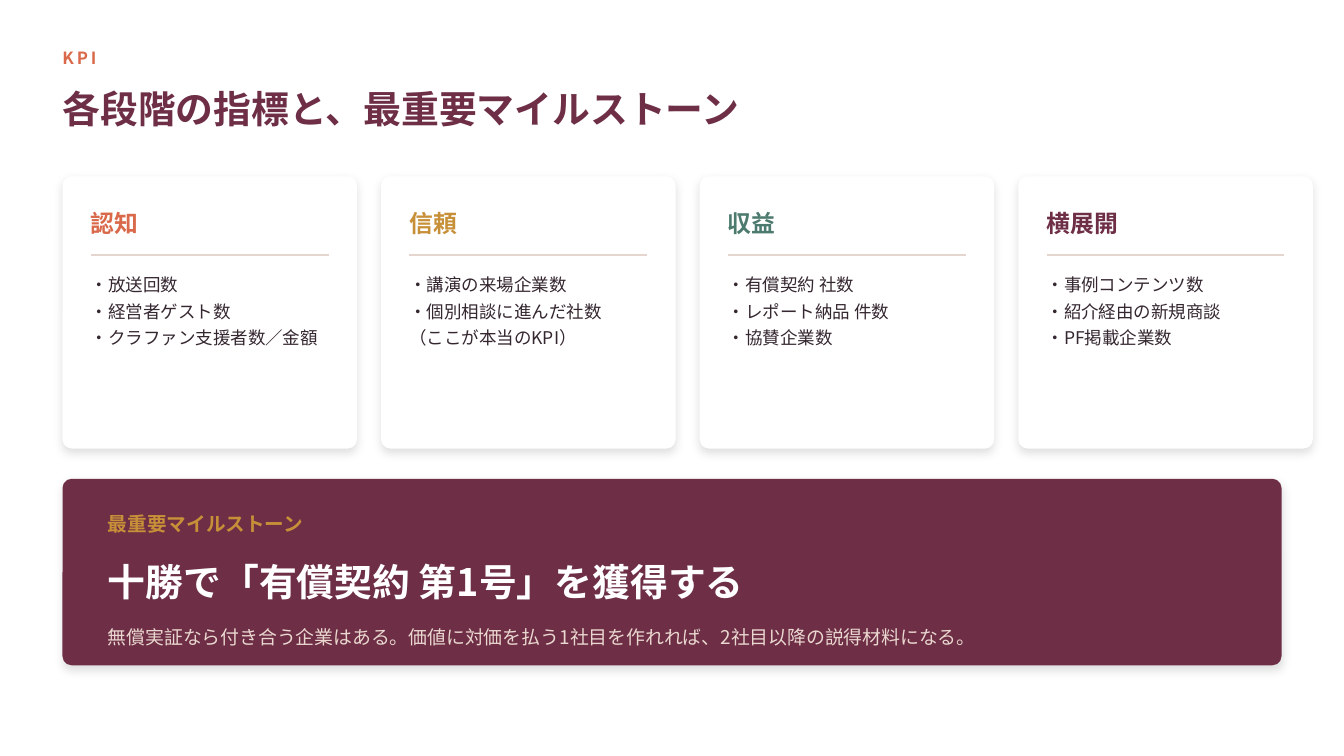
from lxml import etree
from pptx import Presentation
from pptx.dml.color import RGBColor
from pptx.enum.shapes import MSO_CONNECTOR, MSO_SHAPE
from pptx.enum.text import MSO_ANCHOR, MSO_AUTO_SIZE, PP_ALIGN
from pptx.oxml import parse_xml
from pptx.oxml.ns import nsdecls, qn
from pptx.util import Pt

LINE = MSO_CONNECTOR.STRAIGHT
ROUND_RECT = MSO_SHAPE.ROUNDED_RECTANGLE
LEFT = PP_ALIGN.LEFT
TOP, MIDDLE = MSO_ANCHOR.TOP, MSO_ANCHOR.MIDDLE
NO_AUTOFIT = MSO_AUTO_SIZE.NONE

PX = 9144  # EMU per px, 100 px to the inch
COMPARISON_LAYOUT = 4
FONT = "Noto Sans CJK JP"
COLORS = {
    "plum": "6D2E46", "coral": "D9694A", "gold": "C79038", "green": "4C7A6E",
    "ink": "352730", "rule": "E4D6CE", "blush": "EAD7CF", "white": "FFFFFF",
}
SHADOW = (
    f'<a:effectLst {nsdecls("a")}>'
    '<a:outerShdw blurRad="88900" dist="38100" dir="5400000" algn="ctr" rotWithShape="0">'
    '<a:srgbClr val="000000"><a:alpha val="12000"/></a:srgbClr>'
    '</a:outerShdw></a:effectLst>'
)

MARGIN, WIDTH = 62, 1209
CARD_TOP, CARD_W, CARD_H, CARD_STEP, CARD_PAD = 175, 292, 270, 316, 28
BANNER_TOP, BANNER_H, BANNER_PAD = 475, 185, 45
RADIUS = 9

CARDS = [
    ("認知", "coral", ["・放送回数", "・経営者ゲスト数", "・クラファン支援者数／金額"]),
    ("信頼", "gold", ["・講演の来場企業数", "・個別相談に進んだ社数", "（ここが本当のKPI）"]),
    ("収益", "green", ["・有償契約 社数", "・レポート納品 件数", "・協賛企業数"]),
    ("横展開", "plum", ["・事例コンテンツ数", "・紹介経由の新規商談", "・PF掲載企業数"]),
]


def rgb(name):
    return RGBColor.from_string(COLORS[name])


class Deck:
    def __init__(self, width, height):
        self.prs = Presentation()
        self.prs.slide_width, self.prs.slide_height = width * PX, height * PX
        self.s = self.prs.slides.add_slide(self.prs.slide_layouts[COMPARISON_LAYOUT])

    def fill_text(self, sp, lines, size, color, bold=False, anchor=MIDDLE,
                  line_spacing=None, tracking=None):
        tf = sp.text_frame
        tf.word_wrap = True
        tf.auto_size = NO_AUTOFIT
        tf.vertical_anchor = anchor
        tf.margin_left = tf.margin_right = tf.margin_top = tf.margin_bottom = 0
        for i, line in enumerate(lines):
            p = tf.add_paragraph() if i else tf.paragraphs[0]
            pPr = p._p.get_or_add_pPr()
            pPr.set("marL", "0")
            pPr.set("indent", "0")
            etree.SubElement(pPr, qn("a:buNone"))
            p.alignment = LEFT
            p.space_before = p.space_after = Pt(0)
            p.line_spacing = line_spacing
            r = p.add_run()
            r.text = line
            r.font.size, r.font.bold, r.font.name = Pt(size), bold, FONT
            r.font.color.rgb = rgb(color)
            rPr = r._r.get_or_add_rPr()
            etree.SubElement(rPr, qn("a:ea")).set("typeface", FONT)
            if tracking:
                rPr.set("spc", str(tracking * 100))

    def text(self, x, y, w, h, line, size, color, **style):
        sp = self.s.shapes.add_textbox(x * PX, y * PX, w * PX, h * PX)
        self.fill_text(sp, [line], size, color, **style)

    def placeholder(self, idx, x, y, w, h, lines, size, color, **style):
        """Move a template placeholder into place, in front of what is drawn so far."""
        sp = self.s.placeholders[idx]
        sp.left, sp.top, sp.width, sp.height = x * PX, y * PX, w * PX, h * PX
        self.s.shapes._spTree.append(sp._element)
        self.fill_text(sp, lines, size, color, **style)

    def panel(self, x, y, w, h, color):
        sp = self.s.shapes.add_shape(ROUND_RECT, x * PX, y * PX, w * PX, h * PX)
        sp.adjustments[0] = RADIUS / min(w, h)
        sp.fill.solid()
        sp.fill.fore_color.rgb = rgb(color)
        sp.line.fill.background()
        sp._element.spPr.append(parse_xml(SHADOW))

    def rule(self, x, y, w):
        line = self.s.shapes.add_connector(LINE, x * PX, y * PX, (x + w) * PX, y * PX)
        line.line.color.rgb = rgb("rule")
        line.line.width = Pt(1)
        etree.SubElement(line._element.spPr, qn("a:effectLst"))

    def card(self, idx, x, heading, color, items):
        self.panel(x, CARD_TOP, CARD_W, CARD_H, "white")
        inner = x + CARD_PAD
        self.text(inner, CARD_TOP + 24, 242, 45, heading, 17, color, bold=True)
        self.rule(inner, CARD_TOP + 78, CARD_W - 2 * CARD_PAD)
        self.placeholder(idx, inner, CARD_TOP + 92, 242, 160, items, 12.5, "ink",
                         anchor=TOP, line_spacing=1.25)

    def banner(self, label, headline, note):
        self.panel(MARGIN, BANNER_TOP, WIDTH, BANNER_H, "plum")
        x, w = MARGIN + BANNER_PAD, WIDTH - 2 * BANNER_PAD
        self.text(x, BANNER_TOP + 25, 600, 40, label, 14, "gold", bold=True)
        self.text(x, BANNER_TOP + 67, w, 70, headline, 27, "white", bold=True)
        self.text(x, BANNER_TOP + 137, w, 40, note, 13.5, "blush")


def main():
    deck = Deck(1333, 750)
    deck.text(MARGIN, 42, 1100, 30, "KPI", 12, "coral", bold=True, tracking=2)
    deck.placeholder(0, MARGIN, 72, WIDTH, 72, ["各段階の指標と、最重要マイルストーン"],
                     27, "plum", bold=True)
    for i, (heading, color, items) in enumerate(CARDS):
        deck.card(i + 1, MARGIN + i * CARD_STEP, heading, color, items)
    deck.banner(
        "最重要マイルストーン",
        "十勝で「有償契約 第1号」を獲得する",
        "無償実証なら付き合う企業はある。価値に対価を払う1社目を作れれば、2社目以降の説得材料になる。",
    )
    deck.prs.save("out.pptx")


if __name__ == "__main__":
    main()
